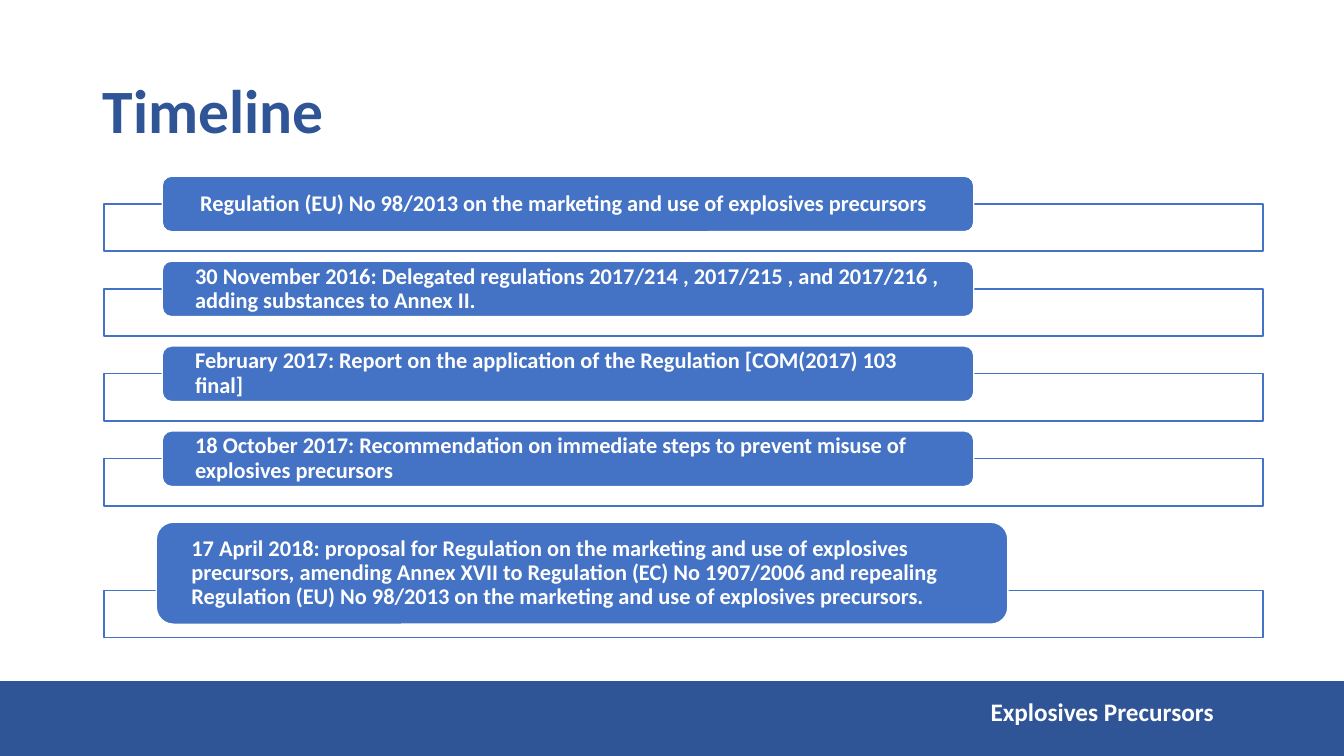
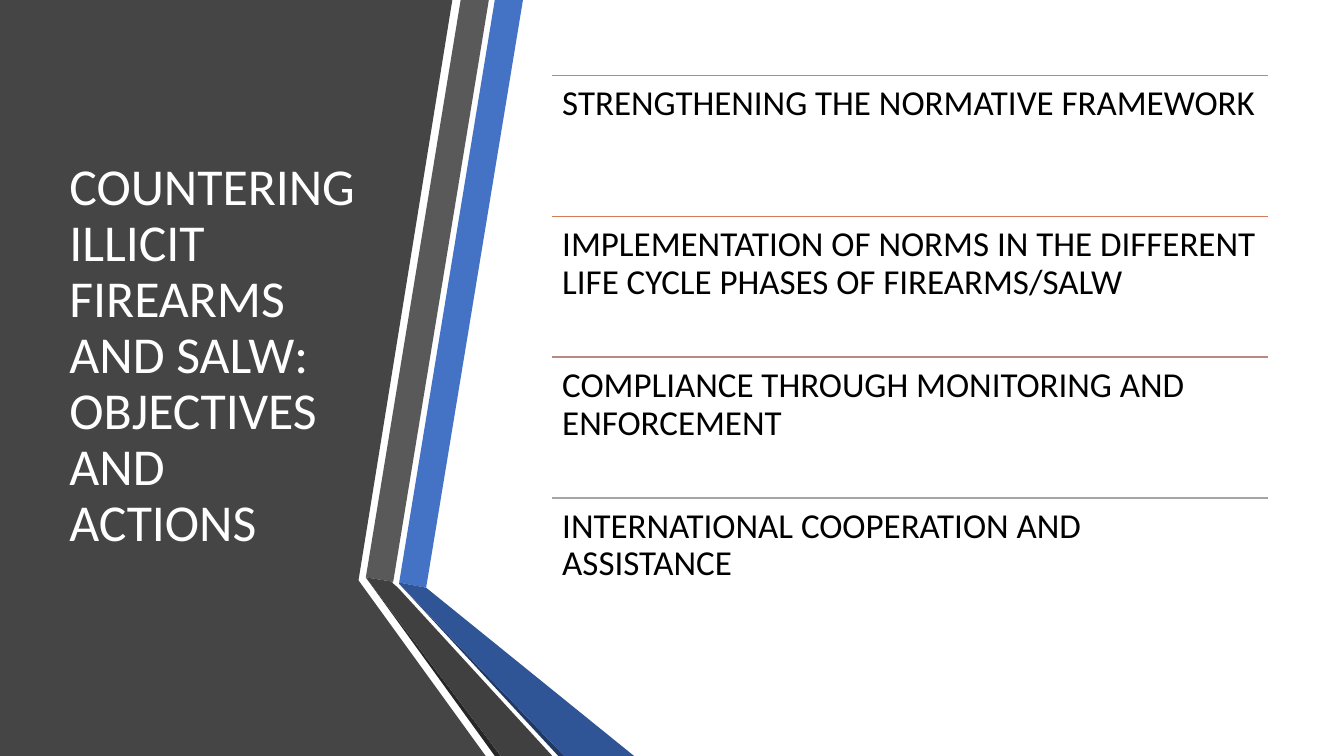
from dataclasses import dataclass
from typing import NamedTuple

from lxml import etree
from pptx import Presentation
from pptx.dml.color import RGBColor
from pptx.enum.shapes import MSO_CONNECTOR, MSO_SHAPE
from pptx.enum.text import MSO_ANCHOR, MSO_AUTO_SIZE, PP_ALIGN
from pptx.oxml.ns import qn
from pptx.util import Cm, Pt

LEFT, RIGHT = PP_ALIGN.LEFT, PP_ALIGN.RIGHT
TOP, MIDDLE = MSO_ANCHOR.TOP, MSO_ANCHOR.MIDDLE
RECTANGLE, ROUNDED = MSO_SHAPE.RECTANGLE, MSO_SHAPE.ROUNDED_RECTANGLE
TITLE_ONLY = 5


@dataclass(frozen=True)
class Theme:
    font: str = "Calibri"
    white: str = "FFFFFF"
    black: str = "000000"
    accent: str = "4472C4"
    navy: str = "2F5597"
    deep_navy: str = "203864"
    panel: str = "454545"
    gray: str = "595959"
    dark_gray: str = "404040"
    shade: str = "262626"
    title_size: int = 44
    panel_title_size: int = 37
    objective_size: int = 25
    footer_size: int = 18
    milestone_size: int = 16
    line_width: int = 1
    line_spacing: float = 0.9


class Pill(NamedTuple):
    """Size of a milestone label, its gap to the frame above and overlap of its own."""
    left: float
    width: float
    height: float
    gap: float
    overlap: float


THEME = Theme()
WIDTH, HEIGHT = 33.87, 19.05

SMALL = Pill(left=4.09, width=20.45, height=1.4, gap=0.25, overlap=0.7)
LARGE = Pill(left=3.94, width=21.46, height=2.57, gap=0.41, overlap=0.85)
MILESTONES = [
    (" Regulation (EU) No 98/2013 on the marketing and use of explosives precursors",
     SMALL),
    ("30 November 2016: Delegated regulations 2017/214 , 2017/215 , and 2017/216 , "
     "adding substances to Annex II.", SMALL),
    ("February 2017: Report on the application of the Regulation [COM(2017) 103 final]",
     SMALL),
    ("18 October 2017: Recommendation on immediate steps to prevent misuse of "
     "explosives precursors", SMALL),
    ("17 April 2018: proposal for Regulation on the marketing and use of explosives "
     "precursors, amending Annex XVII to Regulation (EC) No 1907/2006 and repealing "
     "Regulation (EU) No 98/2013 on the marketing and use of explosives precursors.",
     LARGE),
]
TIMELINE_TOP = 4.19
FRAME_LEFT, FRAME_WIDTH, FRAME_HEIGHT = 2.62, 29.21, 1.19
FOOTER_TOP = 17.17

OBJECTIVES = [
    ("STRENGTHENING THE NORMATIVE FRAMEWORK", "ED7D31"),
    ("IMPLEMENTATION OF NORMS IN THE DIFFERENT LIFE CYCLE PHASES OF FIREARMS/SALW",
     "D17B5C"),
    ("COMPLIANCE THROUGH MONITORING AND ENFORCEMENT", "B98A82"),
    ("INTERNATIONAL COOPERATION AND ASSISTANCE", "A5A5A5"),
]
OBJECTIVE_LEFT, OBJECTIVE_TOP, OBJECTIVE_WIDTH, OBJECTIVE_STEP = 13.92, 1.9, 18.03, 3.55

RIBBONS = [
    (THEME.panel, [(0, 0), (11.4, 0), (9.04, 14.6), (9.04, 14.63),
                   (12.24, HEIGHT), (0, HEIGHT)]),
    (THEME.accent, [(10.06, 14.68), (10.74, 14.81), (13.18, 0), (12.47, 0)]),
    (THEME.gray, [(12.32, 0), (11.61, 0), (9.22, 14.55), (9.91, 14.66)]),
    (THEME.shade, [(9.22, 14.55), (12.47, HEIGHT), (12.62, HEIGHT)]),
    (THEME.deep_navy, [(10.06, 14.71), (14.07, HEIGHT), (14.22, HEIGHT)]),
    (THEME.navy, [(10.06, 14.71), (14.22, HEIGHT), (15.98, HEIGHT),
                  (10.74, 14.81), (10.06, 14.68)]),
    (THEME.dark_gray, [(13.92, HEIGHT), (10.03, 14.81), (9.88, 14.68), (9.91, 14.66),
                       (9.22, 14.55), (12.62, HEIGHT)]),
]


def rgb(color):
    return RGBColor.from_string(color)


def cm_box(*lengths):
    return [Cm(length) for length in lengths]


def write(shape, text, size, color, bold=False, align=LEFT, anchor=MIDDLE,
          insets=(0.25, 0.13, 0.25, 0.13)):
    """Fill a shape with one formatted paragraph; insets run left, top, right, bottom."""
    frame = shape.text_frame
    frame.text = text
    frame.word_wrap = True
    frame.auto_size = MSO_AUTO_SIZE.NONE
    frame.vertical_anchor = anchor
    (frame.margin_left, frame.margin_top,
     frame.margin_right, frame.margin_bottom) = cm_box(*insets)
    paragraph = frame.paragraphs[0]
    paragraph.alignment = align
    paragraph.line_spacing = THEME.line_spacing
    paragraph.font.name = THEME.font
    paragraph.font.size = Pt(size)
    paragraph.font.bold = bold
    paragraph.font.color.rgb = rgb(color)


def paint(shape, fill, line=None):
    shape.shadow.inherit = False
    shape.fill.solid()
    shape.fill.fore_color.rgb = rgb(fill)
    if line:
        shape.line.color.rgb = rgb(line)
        shape.line.width = Pt(THEME.line_width)
    else:
        shape.line.fill.background()


def add_block(slide, kind, box, fill, line):
    shape = slide.shapes.add_shape(kind, *cm_box(*box))
    paint(shape, fill, line)
    return shape


def add_titled_slide(presentation, text, box, size, color, bold=False):
    slide = presentation.slides.add_slide(presentation.slide_layouts[TITLE_ONLY])
    title = slide.shapes.title
    title.left, title.top, title.width, title.height = cm_box(*box)
    write(title, text, size, color, bold)
    return slide


def add_ribbon(slide, color, points):
    (start, *others) = [cm_box(*point) for point in points]
    builder = slide.shapes.build_freeform(*start)
    builder.add_line_segments(others, close=True)
    paint(builder.convert_to_shape(), color)


def add_rule(slide, left, top, width, color):
    rule = slide.shapes.add_connector(
        MSO_CONNECTOR.STRAIGHT, *cm_box(left, top, left + width, top))
    rule.line.color.rgb = rgb(color)
    rule.line.width = Pt(THEME.line_width)
    etree.SubElement(rule.element.spPr, qn("a:effectLst"))


def add_footer(slide, text):
    band = add_block(slide, RECTANGLE, (0, FOOTER_TOP, WIDTH, HEIGHT - FOOTER_TOP),
                     THEME.navy, THEME.navy)
    write(band, text, THEME.footer_size, THEME.white, bold=True, align=RIGHT,
          insets=(0.25, 0, 3.28, 0.25))


def build_timeline(presentation):
    slide = add_titled_slide(presentation, "Timeline", (2.34, 1.02, 29.21, 3.68),
                             THEME.title_size, THEME.navy, bold=True)
    bottom = TIMELINE_TOP
    for text, pill in MILESTONES:
        pill_top = bottom + pill.gap
        frame_top = pill_top + pill.height - pill.overlap
        add_block(slide, RECTANGLE, (FRAME_LEFT, frame_top, FRAME_WIDTH, FRAME_HEIGHT),
                  THEME.white, THEME.accent)
        label = add_block(slide, ROUNDED, (pill.left, pill_top, pill.width, pill.height),
                          THEME.accent, THEME.white)
        write(label, text, THEME.milestone_size, THEME.white, bold=True,
              insets=(0.76, 0, 0.76, 0))
        bottom = frame_top + FRAME_HEIGHT
    add_footer(slide, "Explosives Precursors")


def build_objectives(presentation):
    slide = add_titled_slide(
        presentation, "COUNTERING ILLICIT FIREARMS AND SALW: OBJECTIVES AND ACTIONS",
        (1.5, 1.9, 7.72, 14.17), THEME.panel_title_size, THEME.white)
    for color, points in RIBBONS:
        add_ribbon(slide, color, points)
    title = slide.shapes.title.element
    title.getparent().append(title)  # bring the title in front of the dark panel

    for index, (text, color) in enumerate(OBJECTIVES):
        top = OBJECTIVE_TOP + index * OBJECTIVE_STEP
        add_rule(slide, OBJECTIVE_LEFT, top, OBJECTIVE_WIDTH, color)
        box = slide.shapes.add_textbox(
            *cm_box(OBJECTIVE_LEFT, top, OBJECTIVE_WIDTH, OBJECTIVE_STEP))
        write(box, text, THEME.objective_size, THEME.black, anchor=TOP,
              insets=(0.25, 0.25, 0.25, 0.25))


def main():
    presentation = Presentation()
    presentation.slide_width, presentation.slide_height = cm_box(WIDTH, HEIGHT)
    build_timeline(presentation)
    build_objectives(presentation)
    presentation.save("out.pptx")


if __name__ == "__main__":
    main()
